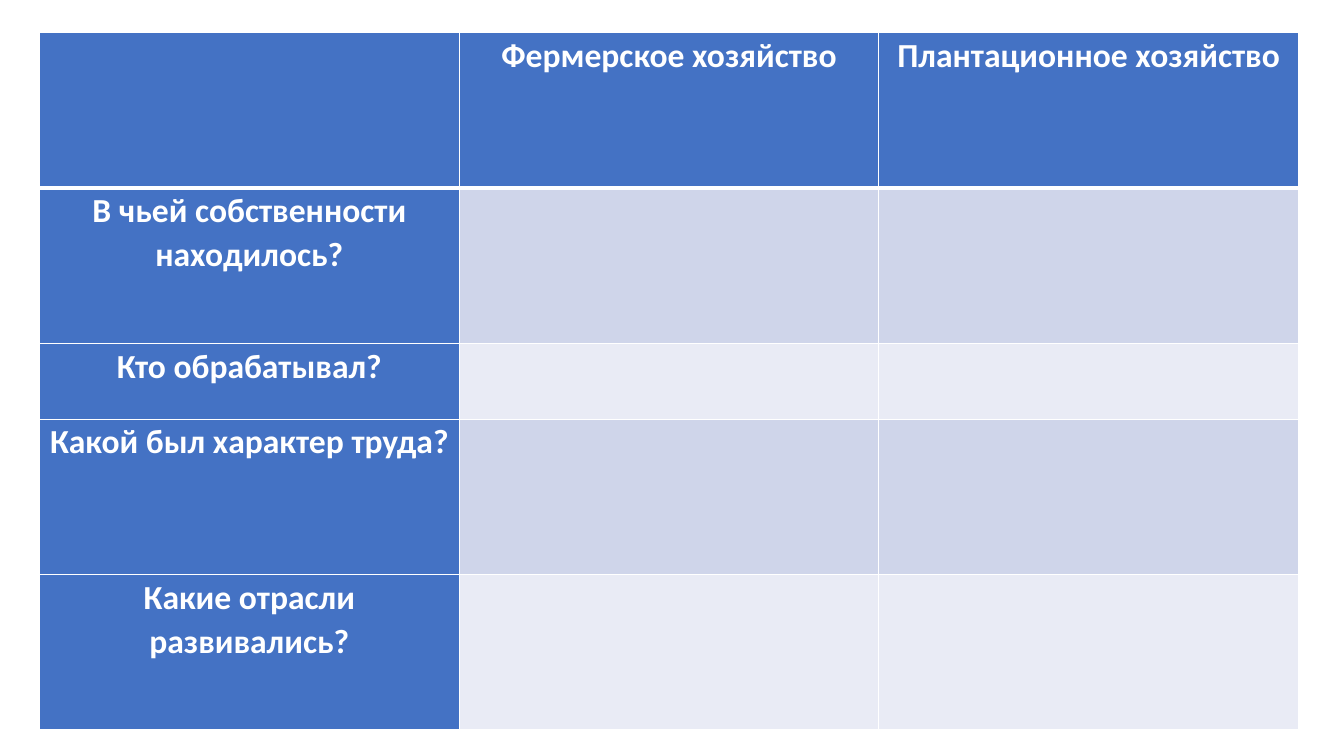
import pptx
import pptx.dml.color
import pptx.enum.text
import pptx.oxml
import pptx.oxml.ns
import pptx.util

Pt = pptx.util.Pt
BLUE, WHITE = "4472C4", "FFFFFF"
BANDS = ["CFD5EA", "E9EBF5"]
HEADINGS = ["", "Фермерское хозяйство", "Плантационное хозяйство"]
QUESTIONS = [
    "В чьей собственности находилось?",
    "Кто обрабатывал?",
    "Какой был характер труда?",
    "Какие отрасли развивались?",
]
ROW_HEIGHTS = [111, 111, 54.2, 111, 111]
COLUMN_WIDTH = 299.75


def color(hex_string):
    return pptx.dml.color.RGBColor.from_string(hex_string)


def add_borders(cell, widths):
    properties = cell._tc.get_or_add_tcPr()
    for index, (side, width) in enumerate(widths.items()):
        line = pptx.oxml.parse_xml(
            f'<a:ln{side} {pptx.oxml.ns.nsdecls("a")} w="{Pt(width)}">'
            f'<a:solidFill><a:srgbClr val="{WHITE}"/></a:solidFill></a:ln{side}>'
        )
        properties.insert(index, line)


# Slide
deck = pptx.Presentation()
deck.slide_width, deck.slide_height = Pt(960), Pt(540)
page = deck.slides.add_slide(deck.slide_layouts[6])

# Table grid
frame = page.shapes.add_table(
    len(ROW_HEIGHTS), len(HEADINGS), Pt(28.3), Pt(23.3),
    Pt(COLUMN_WIDTH * len(HEADINGS)), Pt(sum(ROW_HEIGHTS)),
)
table = frame.table
for column in table.columns:
    column.width = Pt(COLUMN_WIDTH)
for row, height in zip(table.rows, ROW_HEIGHTS):
    row.height = Pt(height)

# Cells: blue headings and questions, banded empty answers
texts = [HEADINGS] + [[question, "", ""] for question in QUESTIONS]
for row_index, row_texts in enumerate(texts):
    for column_index, text in enumerate(row_texts):
        cell = table.cell(row_index, column_index)
        is_heading = row_index == 0 or column_index == 0
        cell.fill.solid()
        cell.fill.fore_color.rgb = color(
            BLUE if is_heading else BANDS[(row_index - 1) % 2]
        )
        add_borders(cell, {
            "L": 1,
            "R": 1,
            "T": 3 if row_index == 1 else 1,
            "B": 3 if row_index == 0 else 1,
        })
        cell.margin_left = cell.margin_right = Pt(5.4)
        cell.margin_top = cell.margin_bottom = Pt(0)
        if text:
            cell.text = text
            para = cell.text_frame.paragraphs[0]
            para.alignment = pptx.enum.text.PP_ALIGN.CENTER
            para.line_spacing = 1.07
            para.font.name = "Calibri"
            para.font.size = Pt(24)
            para.font.bold = True
            para.font.color.rgb = color(WHITE)

deck.save("out.pptx")
